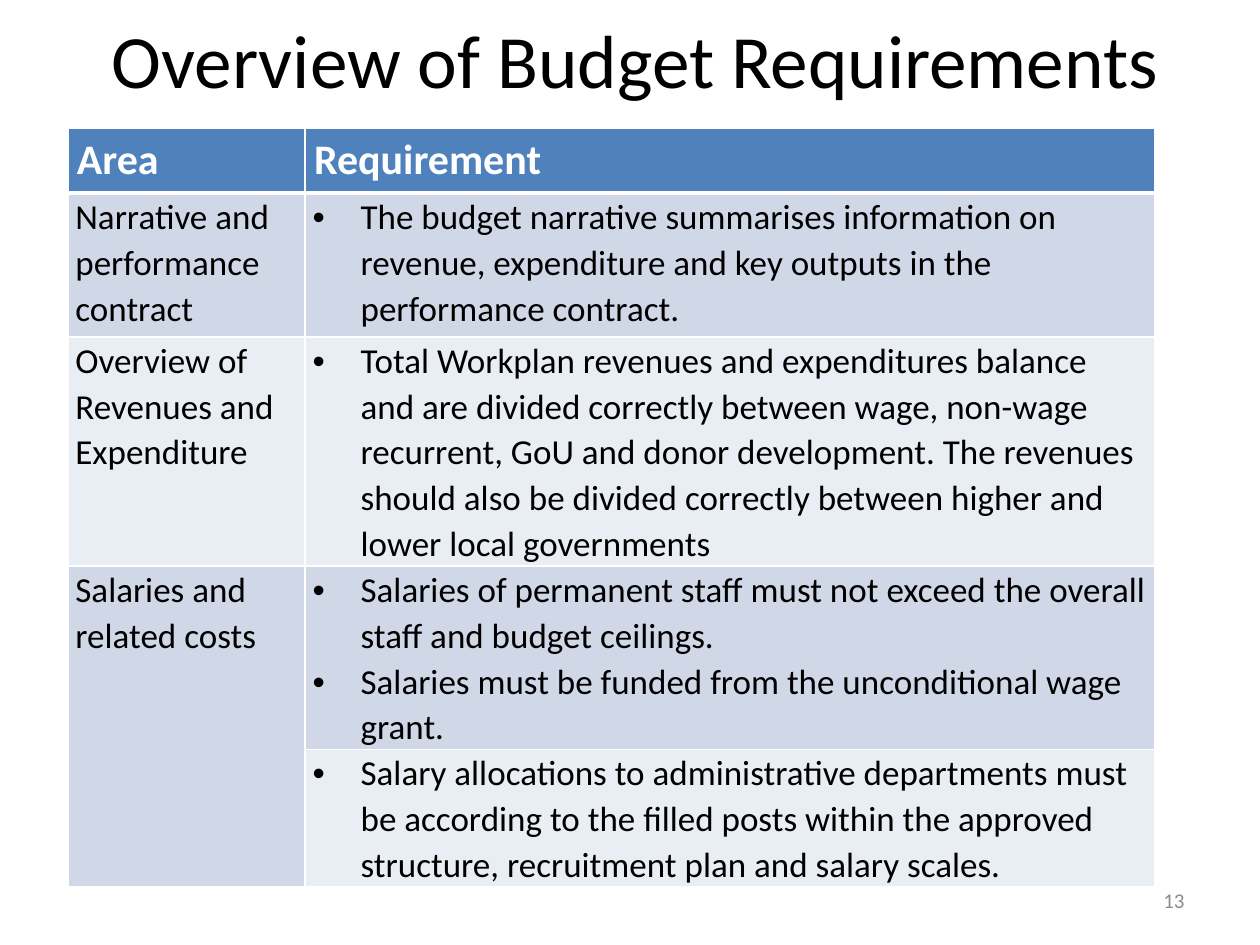
from dataclasses import dataclass

from lxml.etree import SubElement
from pptx import Presentation
from pptx.dml.color import RGBColor as Color
from pptx.enum.text import MSO_ANCHOR as Anchor, MSO_AUTO_SIZE as AutoSize, PP_ALIGN as Align
from pptx.oxml.ns import qn
from pptx.util import Cm, Pt


@dataclass(frozen=True)
class Theme:
    font: str = "Calibri"
    title_size: float = 43
    header_size: float = 24
    body_size: float = 20
    number_size: float = 12
    text: str = "000000"
    light: str = "FFFFFF"
    muted: str = "8C8C8C"
    header_fill: str = "4F81BD"
    bands: tuple = ("D0D8E8", "E9EDF4")
    line_spacing: float = 1.07
    bullet_indent: float = 0.97


TITLE = "Overview of Budget Requirements"
HEADERS = ("Area", "Requirement")
REQUIREMENTS = [
    ("Narrative and performance contract", [
        "The budget narrative summarises information on revenue, expenditure and key "
        "outputs in the performance contract.",
    ]),
    ("Overview of Revenues and Expenditure", [
        "Total Workplan revenues and expenditures balance and are divided correctly "
        "between wage, non-wage recurrent, GoU and donor development. The revenues "
        "should also be divided correctly between higher and lower local governments",
    ]),
    ("Salaries and related costs", [
        "Salaries of permanent staff must not exceed the overall staff and budget ceilings.",
        "Salaries must be funded from the unconditional wage grant.",
    ]),
    (None, [
        "Salary allocations to administrative departments must be according to the "
        "filled posts within the approved structure, recruitment plan and salary scales.",
    ]),
]
COLUMN_WIDTHS = (4.78, 17.12)
ROW_HEIGHTS = (1.3, 2.9, 4.6, 3.68, 2.77)


def write_text(paragraph, text, *, font, size, color, bold=False, align=Align.LEFT,
               line_spacing=None, bullet_indent=None):
    run = paragraph.add_run()
    run.text = text
    run.font.name = font
    run.font.size = Pt(size)
    run.font.bold = bold
    run.font.color.rgb = Color.from_string(color)
    paragraph.alignment = align
    if line_spacing:
        paragraph.line_spacing = line_spacing
    if bullet_indent:
        properties = paragraph._p.get_or_add_pPr()
        properties.set("marL", str(Cm(bullet_indent)))
        properties.set("indent", str(-Cm(bullet_indent)))
        SubElement(properties, qn("a:buFont"), typeface="Arial")
        SubElement(properties, qn("a:buChar"), char="•")


class SlideBuilder:
    def __init__(self, slide, theme):
        self.slide = slide
        self.theme = theme

    def place_text(self, shape, text, box, **text_format):
        shape.left, shape.top, shape.width, shape.height = map(Cm, box)
        frame = shape.text_frame
        frame.word_wrap = True
        frame.auto_size = AutoSize.NONE
        frame.vertical_anchor = Anchor.MIDDLE
        write_text(frame.paragraphs[0], text, font=self.theme.font, **text_format)

    def title(self, text, box):
        self.place_text(self.slide.shapes.title, text, box, size=self.theme.title_size,
                        color=self.theme.text, align=Align.CENTER)

    def page_number(self, text, box):
        shape = self.slide.shapes.add_textbox(*map(Cm, box))
        self.place_text(shape, text, box, size=self.theme.number_size,
                        color=self.theme.muted, align=Align.RIGHT)

    def cell_borders(self, cell, bottom_width=1):
        properties = cell._tc.get_or_add_tcPr()
        for side, width in (("L", 1), ("R", 1), ("T", 1), ("B", bottom_width)):
            line = SubElement(properties, qn(f"a:ln{side}"), w=str(Pt(width)))
            fill = SubElement(line, qn("a:solidFill"))
            SubElement(fill, qn("a:srgbClr"), val=self.theme.light)

    def cell(self, cell, texts, fill, margins, bottom_width=1, **text_format):
        self.cell_borders(cell, bottom_width)
        cell.fill.solid()
        cell.fill.fore_color.rgb = Color.from_string(fill)
        horizontal, vertical = map(Cm, margins)
        cell.margin_left = cell.margin_right = horizontal
        cell.margin_top = cell.margin_bottom = vertical
        frame = cell.text_frame
        for index, text in enumerate(texts):
            paragraph = frame.add_paragraph() if index else frame.paragraphs[0]
            write_text(paragraph, text, font=self.theme.font, **text_format)

    def requirements_table(self, left, top):
        theme = self.theme
        table = self.slide.shapes.add_table(
            len(ROW_HEIGHTS), len(COLUMN_WIDTHS), Cm(left), Cm(top),
            Cm(sum(COLUMN_WIDTHS)), Cm(sum(ROW_HEIGHTS))).table
        for column, width in zip(table.columns, COLUMN_WIDTHS):
            column.width = Cm(width)
        for row, height in zip(table.rows, ROW_HEIGHTS):
            row.height = Cm(height)
        for column, header in enumerate(HEADERS):
            self.cell(table.cell(0, column), [header], theme.header_fill, (0.18, 0.13),
                      bottom_width=3, size=theme.header_size, color=theme.light, bold=True)
        body = dict(margins=(0.15, 0), size=theme.body_size, color=theme.text,
                    line_spacing=theme.line_spacing)
        for row, (area, requirements) in enumerate(REQUIREMENTS, start=1):
            band = theme.bands[(row - 1) % len(theme.bands)]
            area_cell = table.cell(row, 0)
            if area:
                self.cell(area_cell, [area], band, **body)
            else:
                self.cell_borders(area_cell)
                table.cell(row - 1, 0).merge(area_cell)
            self.cell(table.cell(row, 1), requirements, band,
                      bullet_indent=theme.bullet_indent, **body)


def main():
    presentation = Presentation()
    presentation.slide_width, presentation.slide_height = Cm(25.4), Cm(19.05)
    title_only = presentation.slide_layouts.get_by_name("Title Only")
    builder = SlideBuilder(presentation.slides.add_slide(title_only), Theme())
    builder.title(TITLE, (1.37, -0.2, 22.86, 2.74))
    builder.requirements_table(1.37, 2.59)
    builder.page_number("13", (18.2, 17.65, 5.93, 1.01))
    presentation.save("out.pptx")


if __name__ == "__main__":
    main()
